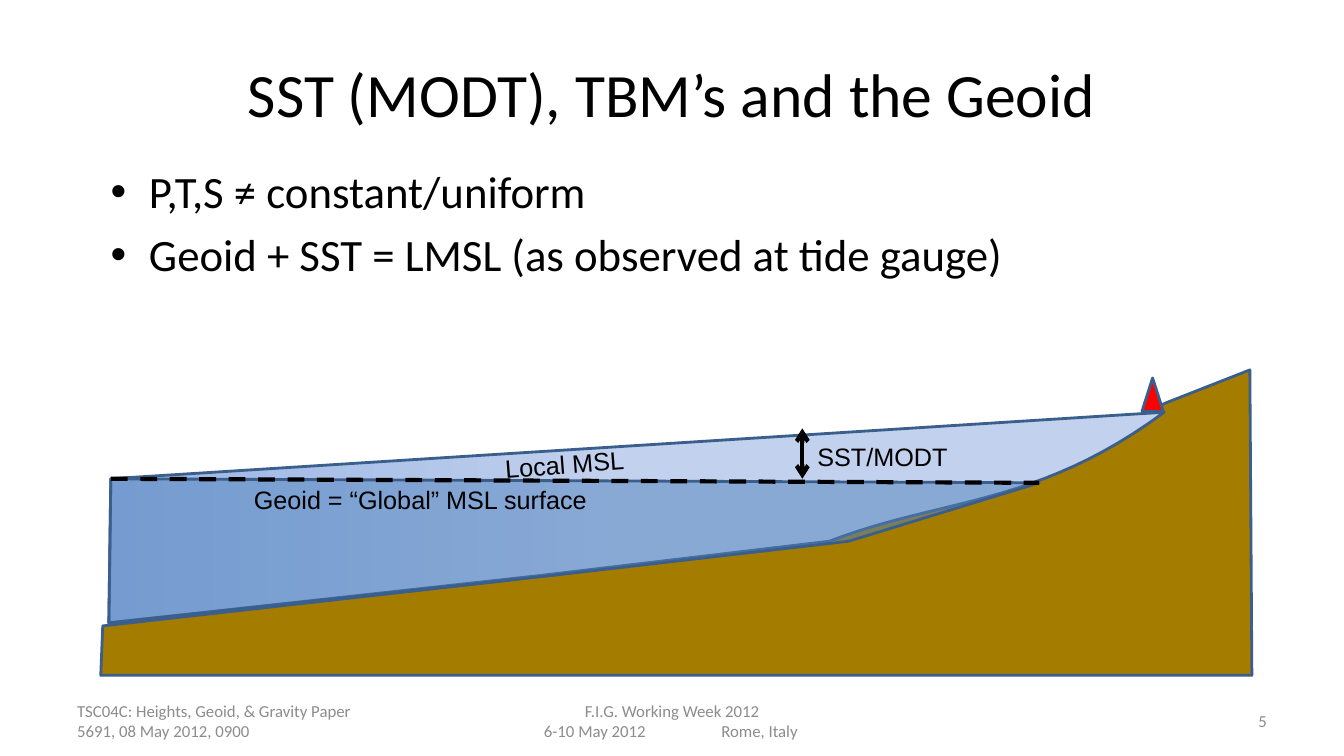
from dataclasses import dataclass

from lxml import etree
from pptx import Presentation
from pptx import util as u
from pptx.dml.color import RGBColor
from pptx.enum import dml, shapes, text
from pptx.oxml import ns

COLUMNS, ROWS = 40, 22.5
CELL = u.Inches(13.333) / COLUMNS
LEFT, CENTER, RIGHT = text.PP_ALIGN.LEFT, text.PP_ALIGN.CENTER, text.PP_ALIGN.RIGHT


@dataclass(frozen=True)
class Theme:
    heading_font: str = "Calibri"
    label_font: str = "Arial"
    title_size: int = 44
    body_size: int = 32
    label_size: int = 18
    footer_size: int = 12
    ink: str = "000000"
    muted: str = "8C8C8C"
    outline: str = "3A5F8C"
    land: str = "A47D00"
    sea_light: str = "C2D1ED"
    sea_deep: str = "9AB5E4"
    geoid_sea: str = "4F81BD"
    gauge: str = "FF0000"
    outline_width: int = 2
    marker_width: int = 3


def cells(count):
    return u.Emu(round(count * CELL))


def add_xml(parent, tag, **attributes):
    return etree.SubElement(parent, ns.qn(tag), attributes)


def bezier(start, control_1, control_2, end, steps=24):
    """Points along a cubic curve, without its start."""
    points = []
    for step in range(1, steps + 1):
        t = step / steps
        weights = ((1 - t) ** 3, 3 * t * (1 - t) ** 2, 3 * t * t * (1 - t), t ** 3)
        corners = (start, control_1, control_2, end)
        points.append(tuple(sum(w * c[axis] for w, c in zip(weights, corners))
                            for axis in (0, 1)))
    return points


class Canvas:
    """Draws on one slide; every place is in grid columns and rows."""

    def __init__(self, page, theme):
        self.page, self.theme = page, theme

    def text_box(self, lines, place, size, font=None, color=None, align=LEFT,
                 anchor=text.MSO_ANCHOR.TOP, bullet=False, tabs=(), rotation=0):
        """Text box; a line that holds a tab is set from the left on the tab stops."""
        box = self.page.shapes.add_textbox(*map(cells, place))
        box.rotation = rotation
        frame = box.text_frame
        frame.word_wrap = True
        frame.vertical_anchor = anchor
        for index, line in enumerate(lines):
            para = frame.paragraphs[0] if index == 0 else frame.add_paragraph()
            para.text = line
            para.alignment = LEFT if "\t" in line else align
            if bullet:
                if index:
                    para.space_before = u.Pt(size * 0.2)
                properties = para._p.get_or_add_pPr()
                properties.set("marL", str(u.Inches(0.38)))
                properties.set("indent", str(-u.Inches(0.38)))
                add_xml(properties, "a:buFont", typeface="Arial")
                add_xml(properties, "a:buChar", char="•")
            if "\t" in line:
                stops = add_xml(para._p.get_or_add_pPr(), "a:tabLst")
                for stop in tabs:
                    add_xml(stops, "a:tab", pos=str(cells(stop)), algn="l")
            para.font.name = font or self.theme.heading_font
            para.font.size = u.Pt(size)
            para.font.color.rgb = RGBColor.from_string(color or self.theme.ink)

    def label(self, caption, place, rotation=0):
        self.text_box([caption], place, self.theme.label_size,
                      font=self.theme.label_font, rotation=rotation)

    def footer(self, lines, left, width, align, tabs=()):
        self.text_box(lines, (left, 20.85, width, 1.2), self.theme.footer_size,
                      color=self.theme.muted, align=align,
                      anchor=text.MSO_ANCHOR.MIDDLE, tabs=tabs)

    def finish(self, shape, fill):
        shape.shadow.inherit = False
        shape.line.color.rgb = RGBColor.from_string(self.theme.outline)
        shape.line.width = u.Pt(self.theme.outline_width)
        if fill:
            shape.fill.solid()
            shape.fill.fore_color.rgb = RGBColor.from_string(fill)
        return shape

    def outline(self, points, fill=None):
        start, *rest = [(cells(x), cells(y)) for x, y in points]
        builder = self.page.shapes.build_freeform(*start)
        builder.add_line_segments(rest, close=True)
        return self.finish(builder.convert_to_shape(), fill)

    def triangle(self, place, fill):
        kind = shapes.MSO_SHAPE.ISOSCELES_TRIANGLE
        self.finish(self.page.shapes.add_shape(kind, *map(cells, place)), fill)

    def connect(self, start, end, dashed=False, arrows=False):
        line = self.page.shapes.add_connector(
            shapes.MSO_CONNECTOR.STRAIGHT, *map(cells, start + end))
        line.line.color.rgb = RGBColor.from_string(self.theme.ink)
        line.line.width = u.Pt(self.theme.marker_width)
        if dashed:
            line.line.dash_style = dml.MSO_LINE.DASH
        if arrows:
            stroke = line._element.spPr.find(ns.qn("a:ln"))
            for tag in ("a:headEnd", "a:tailEnd"):
                add_xml(stroke, tag, type="arrow")
        add_xml(line._element.spPr, "a:effectLst")


def fade(shape, near, far):
    """Plain near colour on the right half, running to far at the left edge."""
    shape.fill.gradient()
    shape.fill.gradient_angle = 180
    for stop, position, color in zip(shape.fill.gradient_stops, (0.5, 1), (near, far)):
        stop.position = position
        stop.color.rgb = RGBColor.from_string(color)


def set_opacity(shape, percent):
    color = shape._element.spPr.find(ns.qn("a:solidFill"))[0]
    add_xml(color, "a:alpha", val=str(percent * 1000))


def draw_profile(canvas):
    theme = canvas.theme
    sea_floor, sea_left = (3.24, 18.54), (3.3, 14.25)
    geoid_shore, local_shore = (30.93, 14.37), (34.65, 12.27)

    canvas.outline([(3.06, 18.63), (14.82, 17.31), (24.24, 16.17), (30.06, 14.43),
                    (34.68, 12), (37.2, 11.01), (37.26, 20.1), (3, 20.1)], theme.land)
    shore = bezier(local_shore, (30.84, 15.09), (28.02, 14.82), (24.69, 16.11))
    local_sea = canvas.outline([sea_floor, sea_left, local_shore, *shore, (16.08, 17.13)])
    fade(local_sea, theme.sea_light, theme.sea_deep)
    geoid_sea = canvas.outline([sea_floor, sea_left, geoid_shore, (25.26, 16.11),
                                (16.41, 17.13)], theme.geoid_sea)
    set_opacity(geoid_sea, 49)

    canvas.label("Geoid = “Global” MSL surface", (7.26, 14.28, 13.68, 1.2))
    canvas.connect(sea_left, geoid_shore, dashed=True)
    canvas.label("Local MSL", (14.73, 13.17, 5.31, 1.2), rotation=355.6)
    canvas.connect((23.88, 12.75), (23.88, 14.25), arrows=True)
    canvas.label("SST/MODT", (24.03, 12.99, 5.73, 1.2))
    canvas.triangle((33.99, 11.25, 0.63, 0.99), theme.gauge)


def main():
    deck = Presentation()
    deck.slide_width, deck.slide_height = cells(COLUMNS), cells(ROWS)
    theme = Theme()
    canvas = Canvas(deck.slides.add_slide(deck.slide_layouts[6]), theme)

    canvas.text_box(["SST (MODT), TBM’s and the Geoid"], (2, 0.9, 36, 3.75),
                    theme.title_size, align=CENTER, anchor=text.MSO_ANCHOR.MIDDLE)
    canvas.text_box(["P,T,S ≠ constant/uniform",
                     "Geoid + SST = LMSL (as observed at tide gauge)"],
                    (3, 4.74, 28.38, 13.11), theme.body_size, bullet=True)
    canvas.footer(["TSC04C: Heights, Geoid, & Gravity Paper 5691, 08 May 2012, 0900"],
                  2, 9.33, LEFT)
    canvas.footer(["F.I.G. Working Week 2012", "\t6-10 May 2012\tRome, Italy"],
                  13.67, 12.67, CENTER, tabs=(2.22, 7.5))
    canvas.footer(["5"], 28.67, 9.33, RIGHT)
    draw_profile(canvas)
    deck.save("out.pptx")


if __name__ == "__main__":
    main()
